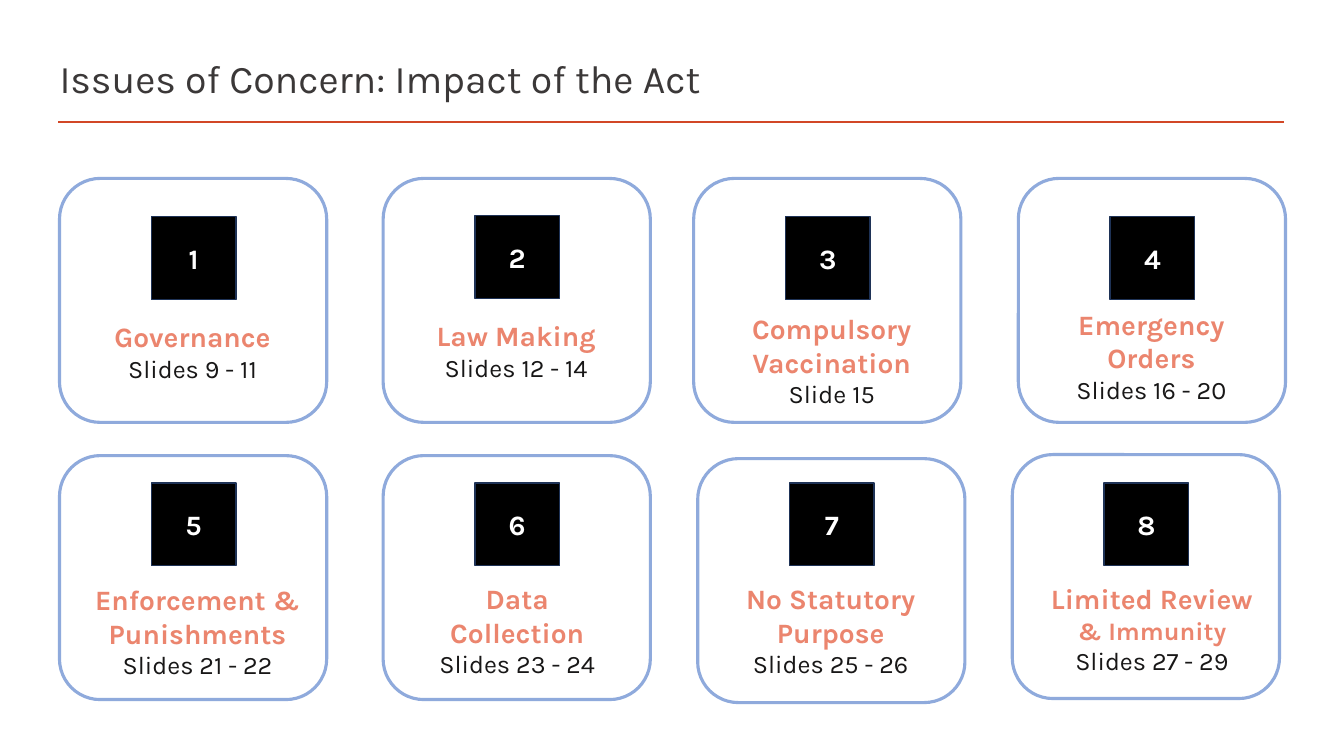
"""Build the overview slide of eight issues of concern, each on a numbered card."""
from lxml import etree
from pptx import Presentation
from pptx import util as u
from pptx.dml.color import RGBColor
from pptx.enum import shapes, text
from pptx.oxml.ns import qn

PX = 9144
THEME = {
    "font": "Karla",
    "title": (28, "3B3838", False),
    "heading": (20, "EB856E", True),
    "subheading": (18, "EB856E", True),
    "reference": (18, "181717", False),
    "number": (20, "FFFFFF", True),
    "rule": "D24726",
    "card": ("FFFFFF", "8FAADC", 2.25),
    "badge": ("000000", "1E3256", 1),
}
CARD_W, CARD_H = 265, 242
BADGE_W, BADGE_H, BADGE_DX = 84, 82, 91

ISSUES = [
    ((59, 177), 215, (101, 312, 180, 74),
     [("Governance", "heading"), ("Slides 9 - 11", "reference")]),
    ((380, 177), 214, (422, 311, 180, 74),
     [("Law Making", "heading"), ("Slides 12 - 14", "reference")]),
    ((688, 177), 215, (712, 304, 226, 108),
     [("Compulsory Vaccination", "heading"), ("Slide 15", "reference")]),
    ((1010, 177), 215, (1052, 300, 180, 108),
     [("Emergency Orders", "heading"), ("Slides 16 - 20", "reference")]),
    ((59, 452), 479, (81, 573, 230, 108),
     [("Enforcement & Punishments", "heading"), ("Slides 21 - 22", "reference")]),
    ((380, 452), 479, (417, 572, 192, 108),
     [("Data Collection", "heading"), ("Slides 23 - 24", "reference")]),
    ((692, 455), 479, (716, 572, 216, 108),
     [("No Statutory Purpose", "heading"), ("Slides 25 - 26", "reference")]),
    ((1004, 451), 479, (1027, 572, 231, 104),
     [("Limited Review", "heading"), ("& Immunity", "subheading"),
      ("Slides 27 - 29", "reference")]),
]


def write(p, wording, style, align=text.PP_ALIGN.CENTER):
    """Add one styled run to a paragraph."""
    size, color, bold = THEME[style]
    p.alignment = align
    r = p.add_run()
    r.text = wording
    r.font.name = THEME["font"]
    r.font.size = u.Pt(size)
    r.font.bold = bold
    r.font.color.rgb = RGBColor.from_string(color)


def add_box(s, style, x, y, w, h):
    """Add a rounded rectangle with a themed fill and outline."""
    fill, line, width = THEME[style]
    sp = s.shapes.add_shape(shapes.MSO_SHAPE.ROUNDED_RECTANGLE,
                            x * PX, y * PX, w * PX, h * PX)
    sp.shadow.inherit = False
    sp.fill.solid()
    sp.fill.fore_color.rgb = RGBColor.from_string(fill)
    sp.line.color.rgb = RGBColor.from_string(line)
    sp.line.width = u.Pt(width)
    return sp


prs = Presentation()
prs.slide_width, prs.slide_height = 1333 * PX, 750 * PX
s = prs.slides.add_slide(prs.slide_layouts[5])

title = s.shapes.title
title.left, title.top, title.width, title.height = [v * PX for v in (49, 47, 1226, 61)]
title.text_frame.vertical_anchor = text.MSO_ANCHOR.MIDDLE
title.text_frame.auto_size = text.MSO_AUTO_SIZE.NONE
write(title.text_frame.paragraphs[0], "Issues of Concern: Impact of the Act",
      "title", text.PP_ALIGN.LEFT)

rule = s.shapes.add_connector(shapes.MSO_CONNECTOR.STRAIGHT,
                              58 * PX, 121 * PX, 1274 * PX, 121 * PX)
rule.line.color.rgb = RGBColor.from_string(THEME["rule"])
rule.line.width = u.Pt(2)
etree.SubElement(rule._element.spPr, qn("a:effectLst"))

for number, ((x, y), badge_y, label_box, lines) in enumerate(ISSUES, 1):
    add_box(s, "card", x, y, CARD_W, CARD_H)

    label = s.shapes.add_textbox(*[v * PX for v in label_box])
    tf = label.text_frame
    tf.word_wrap = True
    tf.auto_size = text.MSO_AUTO_SIZE.SHAPE_TO_FIT_TEXT
    for i, (wording, style) in enumerate(lines):
        p = tf.add_paragraph() if i else tf.paragraphs[0]
        write(p, wording, style)

    badge = add_box(s, "badge", x + BADGE_DX, badge_y, BADGE_W, BADGE_H)
    badge.adjustments[0] = 0
    badge.text_frame.vertical_anchor = text.MSO_ANCHOR.MIDDLE
    write(badge.text_frame.paragraphs[0], str(number), "number")

prs.save("out.pptx")
